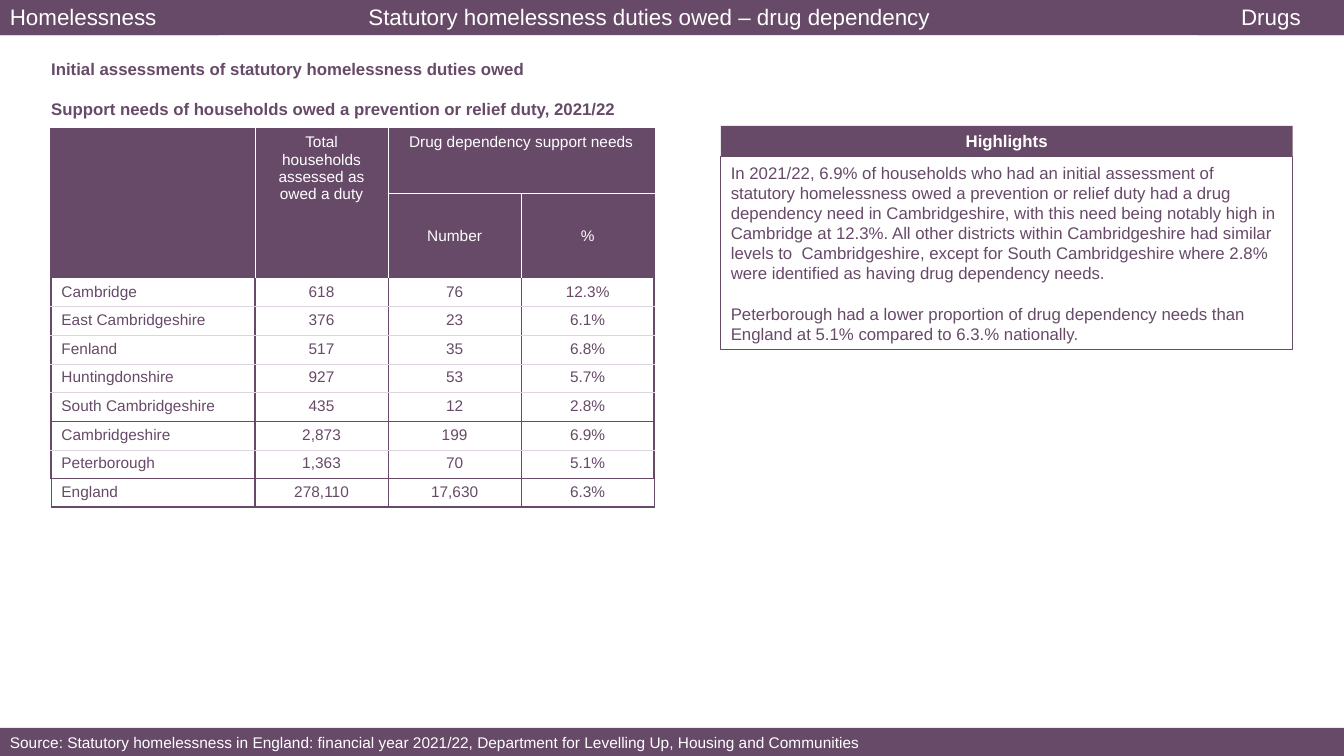
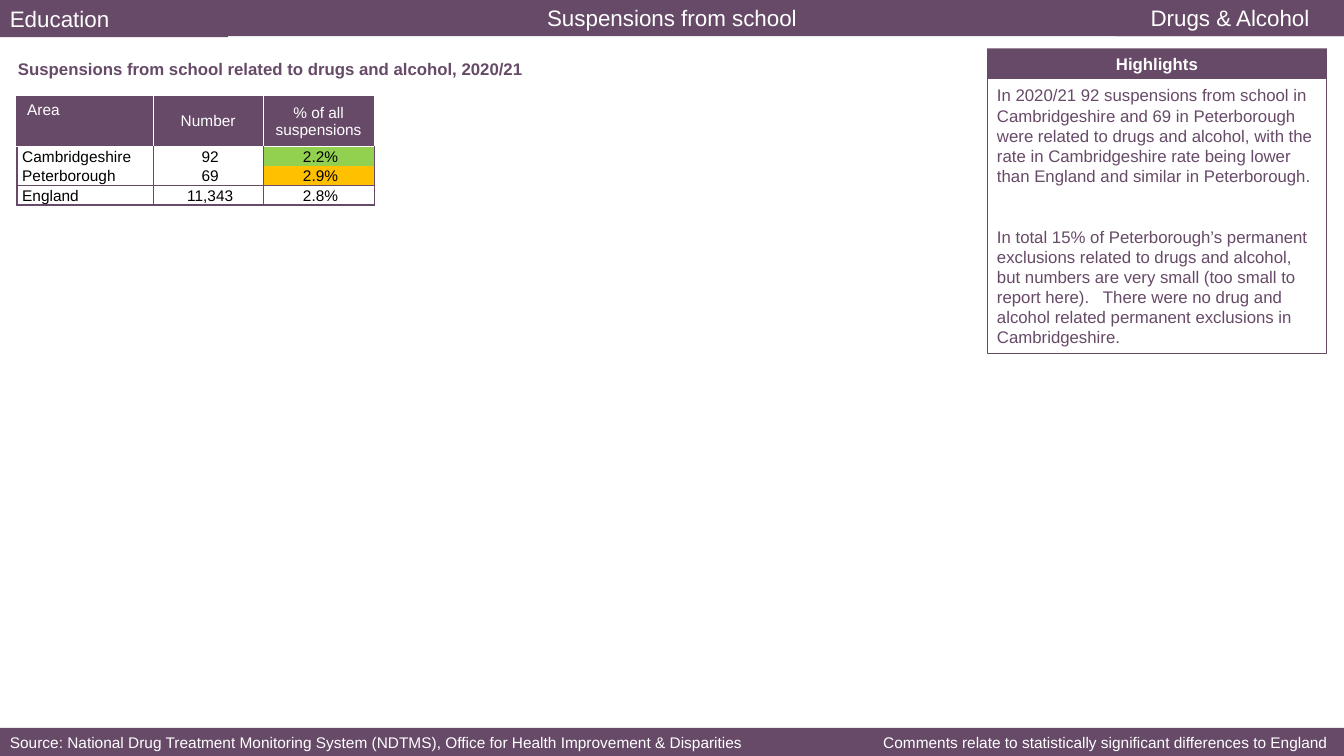
"""Builds two report slides on drugs, alcohol, homelessness and school suspensions."""
import lxml.etree
import pptx
import pptx.dml.color
import pptx.enum.shapes
import pptx.enum.text
import pptx.oxml.ns
import pptx.util

Inches, Pt = pptx.util.Inches, pptx.util.Pt
RGBColor = pptx.dml.color.RGBColor
ALIGN = pptx.enum.text.PP_ALIGN
ANCHOR = pptx.enum.text.MSO_ANCHOR
qn = pptx.oxml.ns.qn

FONT = "Arial"
PLUM = RGBColor(0x67, 0x4A, 0x68)
PALE_PLUM = RGBColor(0xDF, 0xD3, 0xDF)
WHITE = RGBColor(0xFF, 0xFF, 0xFF)
BLACK = RGBColor(0, 0, 0)
GREEN = RGBColor(0x92, 0xD0, 0x50)
AMBER = RGBColor(0xFF, 0xC0, 0x00)

SLIDE_W, SLIDE_H = 13.33, 7.5
BAND_H, FOOTER_TOP, FOOTER_H, LABEL_H = 0.37, 7.22, 0.29, 0.3

THICK, SOLID, THIN = (PLUM, 1.5), (PLUM, 1), (PLUM, 0.5)
PALE, LIGHT = (PALE_PLUM, 0.5), (WHITE, 0.75)

DUTIES_TABLE = {
    "at": (0.51, 1.28),
    "cols": [2.02, 1.32, 1.32, 1.32],
    "header_rows": [0.64, 0.84],
    "body_height": 2.27,
    "headers": [
        (0, 0, 2, 1, "", ALIGN.LEFT, ANCHOR.TOP),
        (0, 1, 2, 1, "Total households assessed as owed a duty", ALIGN.CENTER, ANCHOR.TOP),
        (0, 2, 1, 2, "Drug dependency support needs", ALIGN.CENTER, ANCHOR.TOP),
        (1, 2, 1, 1, "Number", ALIGN.CENTER, ANCHOR.MIDDLE),
        (1, 3, 1, 1, "%", ALIGN.CENTER, ANCHOR.MIDDLE),
    ],
    "body": [
        ("Cambridge", "618", "76", "12.3%"),
        ("East Cambridgeshire", "376", "23", "6.1%"),
        ("Fenland", "517", "35", "6.8%"),
        ("Huntingdonshire", "927", "53", "5.7%"),
        ("South Cambridgeshire", "435", "12", "2.8%"),
        ("Cambridgeshire", "2,873", "199", "6.9%"),
        ("Peterborough", "1,363", "70", "5.1%"),
        ("England", "278,110", "17,630", "6.3%"),
    ],
    "color": PLUM,
    "anchor": ANCHOR.TOP,
    "margins": (0.1, 0.05, 0.1, 0.05),
    "fills": {},
    "horizontal": [THICK, LIGHT, None] + [PALE] * 4 + [SOLID, PALE, SOLID, SOLID],
    "vertical": [[THICK, LIGHT, LIGHT, LIGHT, THICK]] * 2
    + [[THICK, SOLID, SOLID, SOLID, THICK]] * 7 + [[SOLID] * 5],
}

SUSPENSIONS_TABLE = {
    "at": (0.17, 0.96),
    "cols": [1.35, 1.09, 1.1],
    "header_rows": [0.49],
    "body_height": 0.57,
    "headers": [
        (0, 0, 1, 1, "Area", ALIGN.LEFT, ANCHOR.TOP),
        (0, 1, 1, 1, "Number", ALIGN.CENTER, ANCHOR.MIDDLE),
        (0, 2, 1, 1, "% of all suspensions", ALIGN.CENTER, ANCHOR.MIDDLE),
    ],
    "body": [
        ("Cambridgeshire", "92", "2.2%"),
        ("Peterborough", "69", "2.9%"),
        ("England", "11,343", "2.8%"),
    ],
    "color": BLACK,
    "anchor": ANCHOR.BOTTOM,
    "margins": (0.05, 0.01, 0.01, 0),
    "fills": {"2.2%": GREEN, "2.9%": AMBER},
    "horizontal": [THICK, LIGHT, None, THIN, THICK],
    "vertical": [[THICK, LIGHT, LIGHT, LIGHT]] + [[THICK, THIN, THIN, THIN]] * 3,
}

SLIDES = [
    {
        "band_top": -0.02,
        "title": "Statutory homelessness duties owed – drug dependency",
        "title_inset": 0.55,
        "section": ("Homelessness", -0.02, 2.17),
        "topic": ("Drugs", 1.45),
        "source": "Source: Statutory homelessness in England: financial year 2021/22, "
                  "Department for Levelling Up, Housing and Communities",
        "note": "",
        "heading_at": (0.41, 0.53, 7.57, 0.71),
        "headings": ["Initial assessments of statutory homelessness duties owed",
                     "Support needs of households owed a prevention or relief duty, 2021/22"],
        "highlights_at": (7.15, 1.25, 5.67, 1.92),
        "highlights_gap": 14.4,
        "highlights": [
            "In 2021/22, 6.9% of households who had an initial assessment of statutory "
            "homelessness owed a prevention or relief duty had a drug dependency need in "
            "Cambridgeshire, with this need being notably high in Cambridge at 12.3%. All "
            "other districts within Cambridgeshire had similar levels to  Cambridgeshire, "
            "except for South Cambridgeshire where 2.8% were identified as having drug "
            "dependency needs.",
            "Peterborough had a lower proportion of drug dependency needs than England at "
            "5.1% compared to 6.3.% nationally.",
        ],
        "table": DUTIES_TABLE,
    },
    {
        "band_top": -0.01,
        "title": "Suspensions from school",
        "title_inset": 0.1,
        "section": ("Education", 0, 2.26),
        "topic": ("Drugs & Alcohol", 2.26),
        "source": "Source: National Drug Treatment Monitoring System (NDTMS), "
                  "Office for Health Improvement & Disparities",
        "note": "Comments relate to statistically significant differences to England",
        "heading_at": (0.08, 0.53, 6.69, 0.3),
        "headings": ["Suspensions from school related to drugs and alcohol, 2020/21"],
        "highlights_at": (9.79, 0.48, 3.37, 2.73),
        "highlights_gap": 28.8,
        "highlights": [
            "In 2020/21 92 suspensions from school in Cambridgeshire and 69 in Peterborough "
            "were related to drugs and alcohol, with the rate in Cambridgeshire rate being "
            "lower than England and similar in Peterborough.",
            "In total 15% of Peterborough’s permanent exclusions related to drugs and "
            "alcohol, but numbers are very small (too small to report here).   There were "
            "no drug and alcohol related permanent exclusions in Cambridgeshire.",
        ],
        "table": SUSPENSIONS_TABLE,
    },
]


def write(tf, texts, size, color, bold=False, align=ALIGN.LEFT, gap=0):
    for i, text in enumerate(texts):
        p = tf.add_paragraph() if i else tf.paragraphs[0]
        p.alignment = align
        if i:
            p.space_before = Pt(gap)
        r = p.add_run()
        r.text = text
        for name, value in {"name": FONT, "size": Pt(size), "bold": bold}.items():
            setattr(r.font, name, value)
        r.font.color.rgb = color


def add_box(s, at, texts, size, color=WHITE, fill=None, line=None, **style):
    sp = s.shapes.add_shape(pptx.enum.shapes.MSO_SHAPE.RECTANGLE, *map(Inches, at))
    sp.shadow.inherit = False
    if fill is None:
        sp.fill.background()
    else:
        sp.fill.solid()
        sp.fill.fore_color.rgb = fill
    if line is None:
        sp.line.fill.background()
    else:
        sp.line.color.rgb, sp.line.width = line[0], Pt(line[1])
    sp.text_frame.word_wrap = True
    sp.text_frame.vertical_anchor = ANCHOR.MIDDLE
    write(sp.text_frame, texts, size, color, **style)
    return sp


def add_text(s, at, texts, size, color, **style):
    tf = s.shapes.add_textbox(*map(Inches, at)).text_frame
    tf.word_wrap = True
    write(tf, texts, size, color, **style)


def set_borders(cell, edges):
    tc_pr = cell._tc.get_or_add_tcPr()
    for i, (side, edge) in enumerate(zip("LRTB", edges)):
        ln = lxml.etree.Element(qn(f"a:ln{side}"))
        if edge:
            ln.set("w", str(Pt(edge[1])))
            solid = lxml.etree.SubElement(ln, qn("a:solidFill"))
            lxml.etree.SubElement(solid, qn("a:srgbClr")).set("val", str(edge[0]))
        else:
            lxml.etree.SubElement(ln, qn("a:noFill"))
        tc_pr.insert(i, ln)


def add_table(s, spec_table):
    t = spec_table
    top = len(t["header_rows"])
    heights = t["header_rows"] + [t["body_height"] / len(t["body"])] * len(t["body"])
    size = (sum(t["cols"]), sum(heights))
    table = s.shapes.add_table(len(heights), len(t["cols"]),
                               *map(Inches, t["at"] + size)).table
    table.first_row = table.horz_banding = False
    for column, width in zip(table.columns, t["cols"]):
        column.width = Inches(width)
    for row, height in zip(table.rows, heights):
        row.height = Inches(height)

    def fill_cell(r, c, rows, cols, text, fill, color, align, anchor):
        cell = table.cell(r, c)
        if rows * cols > 1:
            cell.merge(table.cell(r + rows - 1, c + cols - 1))
        cell.fill.solid()
        cell.fill.fore_color.rgb = fill
        cell.vertical_anchor = anchor
        write(cell.text_frame, [text] if text else [], 11, color, align=align)
        set_borders(cell, (t["vertical"][r][c], t["vertical"][r][c + cols],
                           t["horizontal"][r], t["horizontal"][r + rows]))
        return cell

    for r, c, rows, cols, text, align, anchor in t["headers"]:
        fill_cell(r, c, rows, cols, text, PLUM, WHITE, align, anchor)
    for r, values in enumerate(t["body"], top):
        for c, text in enumerate(values):
            cell = fill_cell(r, c, 1, 1, text, t["fills"].get(text, WHITE), t["color"],
                             ALIGN.CENTER if c else ALIGN.LEFT, t["anchor"])
            for side, margin in zip(("left", "top", "right", "bottom"), t["margins"]):
                setattr(cell, f"margin_{side}", Inches(margin))


def add_frame(s, d):
    band = add_box(s, (0, d["band_top"], SLIDE_W, BAND_H), [d["title"]], 16,
                   fill=PLUM, align=ALIGN.CENTER)
    band.text_frame.margin_right = Inches(d["title_inset"])
    section, top, width = d["section"]
    add_box(s, (0, top, width, BAND_H), [section], 16, fill=PLUM)
    topic, width = d["topic"]
    add_box(s, (SLIDE_W - width, d["band_top"], width, BAND_H), [topic], 16,
            fill=PLUM, align=ALIGN.CENTER)
    add_box(s, (0, FOOTER_TOP, SLIDE_W, FOOTER_H), [d["source"]], 11, fill=PLUM)
    if d["note"]:
        add_box(s, (8.27, FOOTER_TOP, 5, FOOTER_H), [d["note"]], 11, align=ALIGN.RIGHT)


def add_highlights(s, d):
    left, top, width, height = d["highlights_at"]
    add_box(s, (left, top + LABEL_H, width, height), d["highlights"], 12, PLUM,
            line=(PLUM, 0.75), gap=d["highlights_gap"])
    add_box(s, (left, top, width, LABEL_H), ["Highlights"], 12, fill=PLUM,
            bold=True, align=ALIGN.CENTER)


def main():
    prs = pptx.Presentation()
    prs.slide_width, prs.slide_height = Inches(SLIDE_W), Inches(SLIDE_H)
    for d in SLIDES:
        s = prs.slides.add_slide(prs.slide_layouts[6])
        add_frame(s, d)
        add_highlights(s, d)
        add_text(s, d["heading_at"], d["headings"], 12, PLUM, bold=True, gap=14.4)
        add_table(s, d["table"])
    prs.save("out.pptx")


if __name__ == "__main__":
    main()
